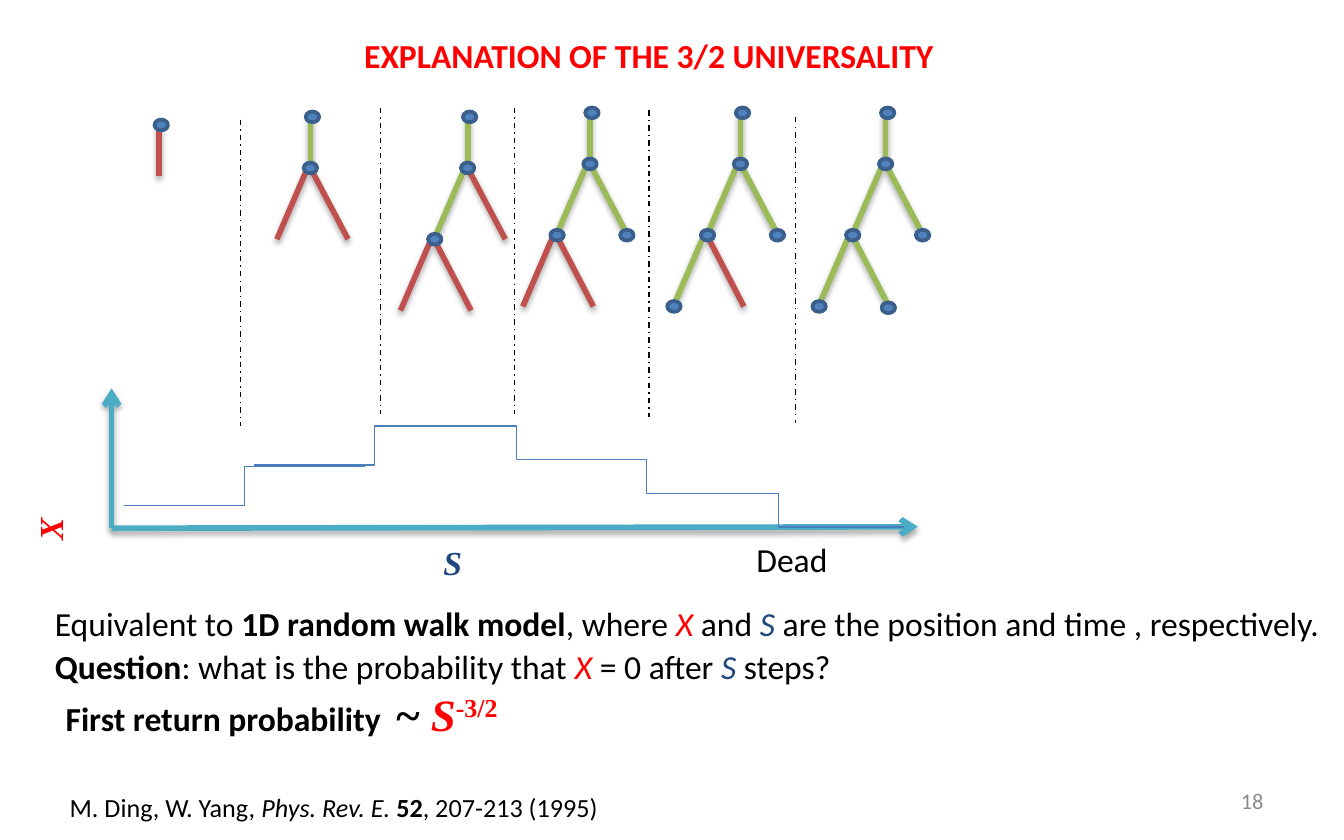
import dataclasses

import lxml.etree
import pptx
import pptx.dml.color
import pptx.enum.dml
import pptx.enum.shapes
import pptx.enum.text
import pptx.oxml.ns
import pptx.util

UNIT = 0.1  # inches in one grid column or row
COLUMNS, ROWS = 100, 62.5


@dataclasses.dataclass(frozen=True)
class Theme:
    red: str = "FF0000"
    navy: str = "1F497D"
    black: str = "000000"
    gray: str = "8C8C8C"
    active: str = "C0504D"
    finished: str = "9BBB59"
    node: str = "4F81BD"
    node_edge: str = "3A5F8C"
    axis: str = "4BACC6"
    walk: str = "4B7EBC"
    sans: str = "Calibri"
    serif: str = "Times New Roman"
    formula: int = 24
    body: int = 18
    citation: int = 14
    number: int = 12
    thick: float = 3
    edge: float = 2
    thin: float = 0.75


@dataclasses.dataclass(frozen=True)
class Box:
    """A region measured in grid columns and rows."""
    left: float
    top: float
    width: float
    height: float

    def inside(self, left, top, width, height):
        return Box(self.left + left, self.top + top, width, height)

    def point(self, column, row):
        return self.left + column, self.top + row


THEME = Theme()

# Ends of the branches of a tree, as (column, row) offsets from its first joint.
PARENTS = {"joint": "root", "left": "joint", "right": "joint",
           "left left": "left", "left right": "left"}
BRANCHES = {
    "joint": ((0, 0), (0, -3.8)),
    "left": ((-2.5, 5.3), (-0.35, 0.3)),
    "right": ((2.8, 5.3), (0, 0)),
    "left left": ((-5, 10.6), (-2.85, 5.6)),
    "left right": ((0.25, 10.6), (-2.5, 5.3)),
}
NODES = {"root": (0.15, -3.8), "joint": (0, 0), "left": (-2.45, 5.3),
         "right": (2.75, 5.3), "left left": (-4.95, 10.6),
         "left right": (0.2, 10.7)}
# First joint of each tree, and how many of the ends have become nodes.
GROWTH = ["root", "joint", "left", "right", "left left", "left right"]
JOINTS = [(11.85, 5.1), (23.1, 4.5), (34.8, 4.5),
          (43.9, 4.2), (55.1, 4.2), (65.9, 4.2)]
DIVIDERS = [(17.9, 0.9), (28.3, 0), (38.3, 0), (48.3, 0.2), (59.2, 0.7)]

# Steps of the walk: start column, width, start row and end row.
STEPS = [(9.2, 17.95, 8.7, 5.8), (18.9, 17.95, 5.7, 2.8),
         (29.1, 18.65, 2.8, 5.3), (38.8, 18.65, 5.3, 7.8),
         (48.6, 18.65, 7.8, 10.3)]


def grid(*lengths):
    return [pptx.util.Inches(UNIT * length) for length in lengths]


def color(value):
    return pptx.dml.color.RGBColor.from_string(value)


def add_line(slide, start, end, stroke, width, elbow=False, shadow=False,
             arrow=False, dash=None):
    kinds = pptx.enum.shapes.MSO_CONNECTOR
    connector = slide.shapes.add_connector(
        kinds.ELBOW if elbow else kinds.STRAIGHT, *grid(*start, *end))
    connector.line.color.rgb = color(stroke)
    connector.line.width = pptx.util.Pt(width)
    if dash is not None:
        connector.line.dash_style = dash
    name = pptx.oxml.ns.qn
    properties = connector._element.spPr
    if arrow:
        lxml.etree.SubElement(properties.find(name("a:ln")),
                              name("a:tailEnd"), type="arrow")
    effects = lxml.etree.SubElement(properties, name("a:effectLst"))
    if shadow:
        outer = lxml.etree.SubElement(
            effects, name("a:outerShdw"), blurRad="40000", dist="23000",
            dir="5400000", rotWithShape="0")
        tint = lxml.etree.SubElement(outer, name("a:srgbClr"), val=THEME.black)
        lxml.etree.SubElement(tint, name("a:alpha"), val="35000")


def add_node(slide, center):
    width, height = 1, 0.8
    shape = slide.shapes.add_shape(
        pptx.enum.shapes.MSO_SHAPE.OVAL,
        *grid(center[0] - width / 2, center[1] - height / 2, width, height))
    shape.shadow.inherit = False
    shape.fill.solid()
    shape.fill.fore_color.rgb = color(THEME.node)
    shape.line.color.rgb = color(THEME.node_edge)
    shape.line.width = pptx.util.Pt(THEME.edge)


def run(text, size=THEME.body, font=THEME.sans, fill=THEME.black,
        bold=False, italic=False, baseline=None):
    return text, size, font, fill, bold, italic, baseline


def add_text(slide, box, runs, align="LEFT", anchor="TOP", wrap=True, turn=0):
    shape = slide.shapes.add_textbox(
        *grid(box.left, box.top, box.width, box.height))
    shape.rotation = turn
    frame = shape.text_frame
    frame.word_wrap = wrap
    frame.vertical_anchor = getattr(pptx.enum.text.MSO_ANCHOR, anchor)
    paragraph = frame.paragraphs[0]
    paragraph.alignment = getattr(pptx.enum.text.PP_ALIGN, align)
    for text, size, font, fill, bold, italic, baseline in runs:
        piece = paragraph.add_run()
        piece.text = text
        piece.font.size = pptx.util.Pt(size)
        piece.font.name = font
        piece.font.color.rgb = color(fill)
        piece.font.bold = bold
        piece.font.italic = italic
        if baseline:
            piece.font._element.set("baseline", str(baseline * 1000))


def draw_tree(slide, box, nodes):
    """Grow a branch from every node; it is finished once its end is a node."""
    for end, (start, finish) in BRANCHES.items():
        if PARENTS[end] in nodes:
            stroke = THEME.finished if end in nodes else THEME.active
            add_line(slide, box.point(*start), box.point(*finish), stroke,
                     THEME.thick, shadow=True)
    for node in nodes:
        add_node(slide, box.point(*NODES[node]))


def draw_trees(slide, box):
    for count, joint in enumerate(JOINTS, start=1):
        draw_tree(slide, box.inside(*joint, 8, 15), GROWTH[:count])
    for column, row in DIVIDERS:
        add_line(slide, box.point(column, row), box.point(column, row + 22.8),
                 THEME.black, THEME.thin,
                 dash=pptx.enum.dml.MSO_LINE.DASH_DOT)


def draw_walk(slide, box):
    origin = box.point(8.3, 10.4)
    for tip in [(8.3, 0), (68.3, 10.3)]:
        add_line(slide, origin, box.point(*tip), THEME.axis, THEME.thick,
                 shadow=True, arrow=True)
    for column, width, start, end in STEPS:
        add_line(slide, box.point(column, start),
                 box.point(column + width, end), THEME.walk, THEME.thin,
                 elbow=True)
    label = {"font": THEME.serif, "bold": True, "italic": True}
    add_text(slide, box.inside(1.6, 8.2, 4.2, 4),
             [run("X", fill=THEME.red, **label)], wrap=False, turn=270)
    add_text(slide, box.inside(32, 10.9, 3.8, 4),
             [run("S", fill=THEME.navy, **label)], wrap=False)
    add_text(slide, box.inside(55.3, 10.7, 8.6, 4), [run("Dead")])


def write_conclusion(slide, box):
    position = run("X", fill=THEME.red, italic=True)
    time = run("S", fill=THEME.navy, italic=True)
    formula = {"size": THEME.formula, "font": THEME.serif, "bold": True}
    add_text(slide, box.inside(0, 0, 105.9, 4), [
        run("Equivalent to "), run("1D random walk model", bold=True),
        run(", where "), position, run(" and "), time,
        run(" are the position and time , respectively.")])
    add_text(slide, box.inside(0, 3.2, 63, 4), [
        run("Question", bold=True), run(": what is the probability that "),
        position, run(" = 0 after "), time, run(" steps?")])
    add_text(slide, box.inside(0.8, 6.2, 63, 5), [
        run("First return probability  ", bold=True), run("~ ", **formula),
        run("S", fill=THEME.red, italic=True, **formula),
        run("-3/2", fill=THEME.red, baseline=30, **formula)])


def write_footer(slide, box):
    size = THEME.citation
    add_text(slide, box.inside(4.2, 0.5, 41.6, 3.4), [
        run("M. Ding, W. Yang, ", size),
        run("Phys. Rev. E. ", size, italic=True),
        run("52", size, bold=True), run(", 207-213 (1995)", size)], wrap=False)
    add_text(slide, box.inside(71.7, 0, 23.3, 3.3),
             [run("18", THEME.number, fill=THEME.gray)], "RIGHT", "MIDDLE")


def main():
    presentation = pptx.Presentation()
    presentation.slide_width, presentation.slide_height = grid(COLUMNS, ROWS)
    slide = presentation.slides.add_slide(presentation.slide_layouts[6])
    add_text(slide, Box(-1.7, 2.2, COLUMNS, 3.8),
             [run("EXPLANATION OF THE 3/2 UNIVERSALITY", fill=THEME.red,
                  bold=True)], "CENTER", "MIDDLE")
    draw_trees(slide, Box(0, 8, COLUMNS, 24))
    draw_walk(slide, Box(0, 28.9, COLUMNS, 15))
    write_conclusion(slide, Box(3.1, 44.4, COLUMNS, 12))
    write_footer(slide, Box(0, 57.9, COLUMNS, 4))
    presentation.save("out.pptx")


if __name__ == "__main__":
    main()
